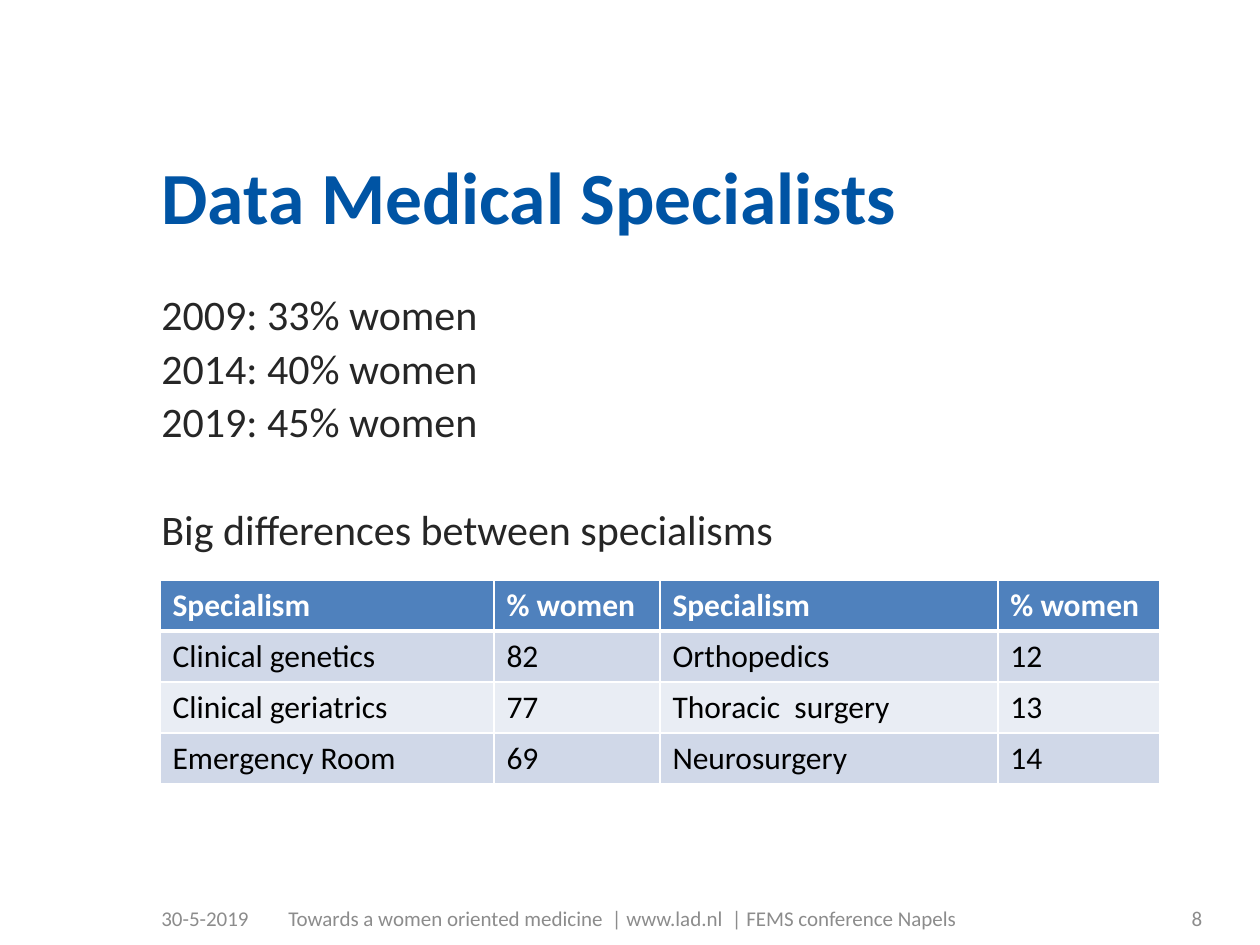
import pptx
import pptx.dml.color
import pptx.enum.text
import pptx.oxml
import pptx.oxml.ns
import pptx.util

PX = 914400 // 126
THEME = {
    "font": "Calibri",
    "title": "0054A4",
    "body": "262626",
    "footer": "8C8C8C",
    "header_fill": "4F81BD",
    "band_fills": ["D0D8E8", "E9EDF4"],
    "white": "FFFFFF",
    "black": "000000",
    "title_size": 42,
    "body_size": 24,
    "table_size": 18,
    "footer_size": 12,
}
ANCHOR = pptx.enum.text.MSO_ANCHOR
ALIGN = pptx.enum.text.PP_ALIGN


def style_paragraph(paragraph, size, color, bold=False):
    paragraph.font.name = THEME["font"]
    paragraph.font.size = pptx.util.Pt(THEME[size])
    paragraph.font.bold = bold
    paragraph.font.color.rgb = pptx.dml.color.RGBColor.from_string(THEME[color])


def add_text_frame(left, top, width, height, anchor):
    shape = slide.shapes.add_textbox(left * PX, top * PX, width * PX, height * PX)
    shape.text_frame.word_wrap = True
    shape.text_frame.vertical_anchor = anchor
    return shape.text_frame


presentation = pptx.Presentation()
presentation.slide_width = pptx.util.Inches(10)
presentation.slide_height = pptx.util.Inches(7.5)
slide = presentation.slides.add_slide(presentation.slide_layouts[6])

title = add_text_frame(149, 149, 976, 121, ANCHOR.TOP).paragraphs[0]
title.text = "Data Medical Specialists"
title.line_spacing = pptx.util.Pt(48)
style_paragraph(title, "title_size", "title", True)

body_lines = [
    ("2009: 33% women", 0),
    ("2014: 40% women", 4.8),
    ("2019: 45% women", 4.8),
    ("Big differences between specialisms", 35.6),
]
body = add_text_frame(149, 287, 976, 581, ANCHOR.TOP)
for index, (text, space_before) in enumerate(body_lines):
    paragraph = body.add_paragraph() if index else body.paragraphs[0]
    paragraph.text = text
    paragraph.line_spacing = pptx.util.Pt(26)
    paragraph.space_before = pptx.util.Pt(space_before)
    style_paragraph(paragraph, "body_size", "body")

footers = [
    (149, 127, "30-5-2019", ALIGN.LEFT),
    (276, 849, "Towards a women oriented medicine  | www.lad.nl  | FEMS conference Napels", ALIGN.LEFT),
    (1153, 88, "8", ALIGN.CENTER),
]
for left, width, text, alignment in footers:
    paragraph = add_text_frame(left, 893, width, 50, ANCHOR.MIDDLE).paragraphs[0]
    paragraph.text = text
    paragraph.alignment = alignment
    style_paragraph(paragraph, "footer_size", "footer")

table_rows = [
    ["Specialism", "% women", "Specialism", "% women"],
    ["Clinical genetics", "82", "Orthopedics", "12"],
    ["Clinical geriatrics", "77", "Thoracic  surgery", "13"],
    ["Emergency Room", "69", "Neurosurgery", "14"],
]
column_widths = [334, 166, 338, 162]
row_height = 51
table = slide.shapes.add_table(
    len(table_rows), len(column_widths), 160 * PX, 580 * PX,
    sum(column_widths) * PX, len(table_rows) * row_height * PX,
).table
for column, width in zip(table.columns, column_widths):
    column.width = width * PX
for row_index, texts in enumerate(table_rows):
    table.rows[row_index].height = row_height * PX
    is_header = row_index == 0
    fill = THEME["header_fill"] if is_header else THEME["band_fills"][(row_index - 1) % 2]
    border_widths = {
        "lnL": 1,
        "lnR": 1,
        "lnT": 3 if row_index == 1 else 1,
        "lnB": 3 if is_header else 1,
    }
    for column_index, text in enumerate(texts):
        cell = table.cell(row_index, column_index)
        cell.text = text
        style_paragraph(cell.text_frame.paragraphs[0], "table_size",
                        "white" if is_header else "black", is_header)
        properties = cell._tc.get_or_add_tcPr()
        for side, width in border_widths.items():
            properties.append(pptx.oxml.parse_xml(
                f'<a:{side} {pptx.oxml.ns.nsdecls("a")} w="{pptx.util.Pt(width)}">'
                f'<a:solidFill><a:srgbClr val="{THEME["white"]}"/></a:solidFill></a:{side}>'
            ))
        cell.fill.solid()
        cell.fill.fore_color.rgb = pptx.dml.color.RGBColor.from_string(fill)

presentation.save("out.pptx")
